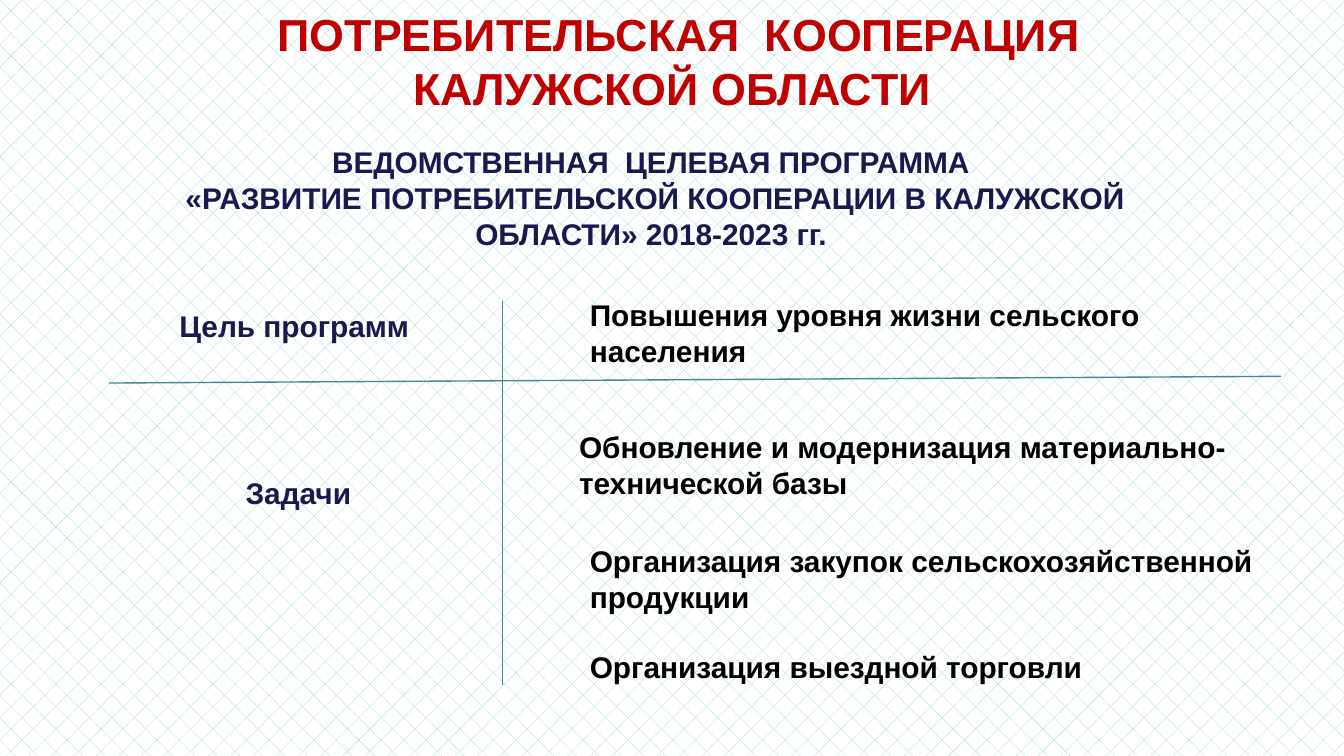
"""Builds a slide on the goal and tasks of a regional cooperative programme."""
from dataclasses import dataclass

from lxml import etree
from pptx import Presentation
from pptx.dml.color import RGBColor
from pptx.enum.dml import MSO_PATTERN
from pptx.enum.shapes import MSO_CONNECTOR
from pptx.enum.text import PP_ALIGN
from pptx.oxml.ns import qn
from pptx.util import Inches, Pt

STRAIGHT = MSO_CONNECTOR.STRAIGHT
CENTER, LEFT = PP_ALIGN.CENTER, PP_ALIGN.LEFT
DIAMONDS = MSO_PATTERN.DOTTED_DIAMOND


@dataclass(frozen=True)
class Theme:
    font: str = "Arial"
    title: str = "C00000"
    heading: str = "19194D"
    body: str = "000000"
    rule: str = "3C8C93"
    pattern: str = "9ED3D7"
    paper: str = "FFFFFF"
    title_size: int = 24
    text_size: int = 16
    rule_width: float = 0.75


THEME = Theme()
TITLE_INDENT = 0.1

TITLE = "ПОТРЕБИТЕЛЬСКАЯ  КООПЕРАЦИЯ\nКАЛУЖСКОЙ ОБЛАСТИ"
PROGRAMME = (
    "ВЕДОМСТВЕННАЯ  ЦЕЛЕВАЯ ПРОГРАММА\v"
    " «РАЗВИТИЕ ПОТРЕБИТЕЛЬСКОЙ КООПЕРАЦИИ В КАЛУЖСКОЙ ОБЛАСТИ» 2018-2023 гг."
)
HEADINGS = [
    (PROGRAMME, (0.81, 1.02, 8.07, 1.26)),
    ("Цель программ", (0.64, 2.24, 3.1, 0.41)),
    ("Задачи", (0.67, 3.48, 3.1, 0.41)),
]
STATEMENTS = [
    ("Повышения уровня жизни сельского населения", (4.29, 2.16, 5.32, 0.64)),
    ("Обновление и модернизация материально-технической базы", (4.21, 3.14, 5.32, 0.64)),
    ("Организация закупок сельскохозяйственной продукции", (4.29, 3.99, 5.32, 0.64)),
    ("Организация выездной торговли", (4.29, 4.78, 5.48, 0.37)),
]
DIVIDERS = [(3.74, 5.1, 3.74, 2.24), (9.53, 2.8, 0.81, 2.85)]


def rgb(color):
    return RGBColor.from_string(color)


def add_text(slide, text, area, color, size, align):
    frame = slide.shapes.add_textbox(*map(Inches, area)).text_frame
    frame.word_wrap = True
    frame.text = text
    for paragraph in frame.paragraphs:
        paragraph.alignment = align
        paragraph.font.name = THEME.font
        paragraph.font.size = Pt(size)
        paragraph.font.bold = True
        paragraph.font.color.rgb = rgb(color)
    return frame


def add_divider(slide, ends):
    divider = slide.shapes.add_connector(STRAIGHT, *map(Inches, ends))
    divider.line.color.rgb = rgb(THEME.rule)
    divider.line.width = Pt(THEME.rule_width)
    etree.SubElement(divider._element.spPr, qn("a:effectLst"))


def main():
    deck = Presentation()
    deck.slide_width = Inches(10)
    deck.slide_height = deck.slide_width * 9 // 16
    slide = deck.slides.add_slide(deck.slide_layouts[6])

    backdrop = slide.background.fill
    backdrop.patterned()
    backdrop.pattern = DIAMONDS
    backdrop.fore_color.rgb = rgb(THEME.pattern)
    backdrop.back_color.rgb = rgb(THEME.paper)

    title = add_text(slide, TITLE, (0, 0, 10, 0.91), THEME.title, THEME.title_size, CENTER)
    title.paragraphs[0]._p.get_or_add_pPr().set("marL", str(Inches(TITLE_INDENT)))
    for heading, area in HEADINGS:
        add_text(slide, heading, area, THEME.heading, THEME.text_size, CENTER)
    for statement, area in STATEMENTS:
        add_text(slide, statement, area, THEME.body, THEME.text_size, LEFT)
    for ends in DIVIDERS:
        add_divider(slide, ends)

    deck.save("out.pptx")


if __name__ == "__main__":
    main()
